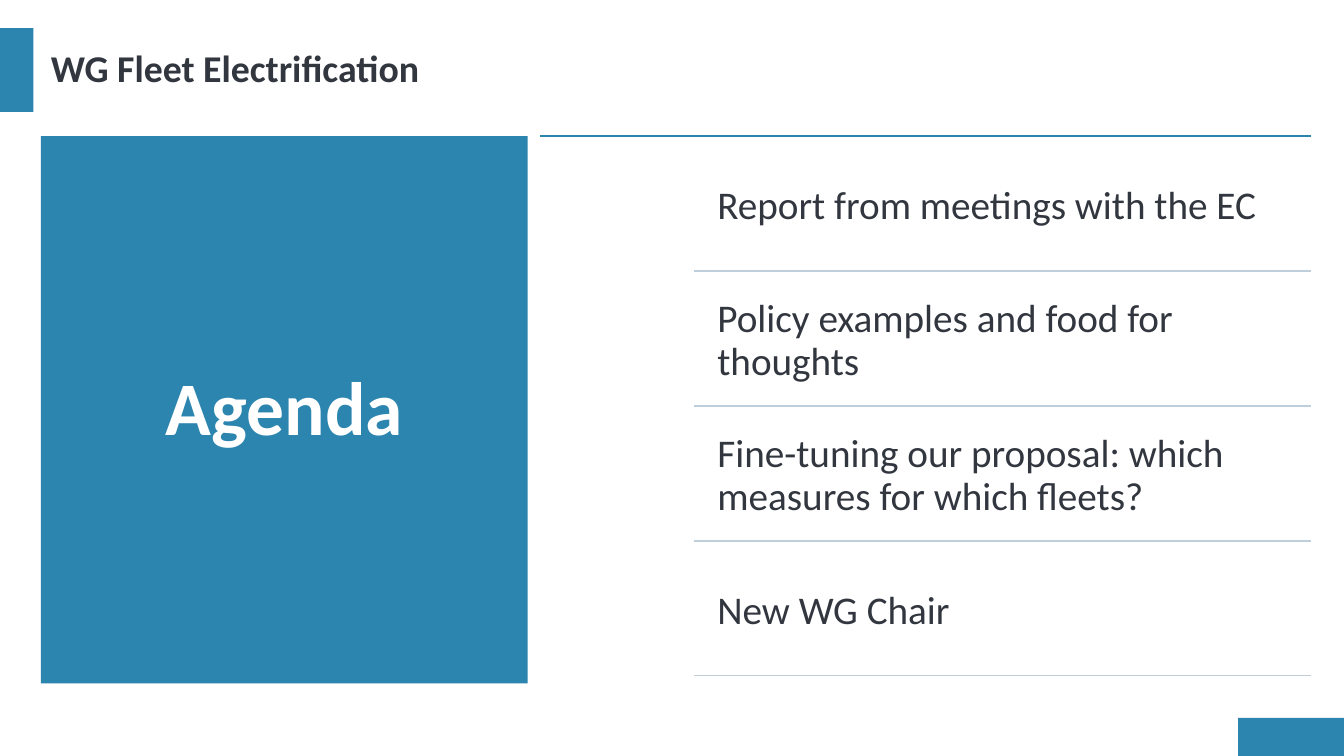
from lxml import etree
from pptx import Presentation
from pptx import util as u
from pptx.dml.color import RGBColor
from pptx.enum import shapes, text
from pptx.oxml.ns import qn

COLORS = {"blue": "2C85AE", "pale": "BECEDB", "dark": "32363F", "white": "FFFFFF"}
AGENDA_ITEMS = [
    "Report from meetings with the EC",
    "Policy examples and food for thoughts",
    "Fine-tuning our proposal: which measures for which fleets?",
    "New WG Chair",
]


class SlideBuilder:
    """Holds the style and the slide that is being filled."""

    font_name = "Calibri"
    line_width = u.Pt(1)
    line_spacing = 0.9

    def __init__(self, slide):
        self.slide = slide

    def color(self, name):
        return RGBColor.from_string(COLORS[name])

    def block(self, left, top, width, height, color="blue"):
        shape = self.slide.shapes.add_shape(
            shapes.MSO_SHAPE.RECTANGLE, *map(u.Cm, (left, top, width, height)))
        shape.shadow.inherit = False
        shape.fill.solid()
        shape.fill.fore_color.rgb = self.color(color)
        shape.line.fill.background()

    def rule(self, left, right, y, color):
        connector = self.slide.shapes.add_connector(
            shapes.MSO_CONNECTOR.STRAIGHT, *map(u.Cm, (left, y, right, y)))
        connector.line.color.rgb = self.color(color)
        connector.line.width = self.line_width
        etree.SubElement(connector._element.spPr, qn("a:effectLst"))

    def label(self, left, top, width, height, words, size, color="dark",
              bold=False, align=text.PP_ALIGN.LEFT, inset=0.25):
        box = self.slide.shapes.add_textbox(*map(u.Cm, (left, top, width, height)))
        frame = box.text_frame
        frame_format = {
            "word_wrap": True,
            "vertical_anchor": text.MSO_ANCHOR.MIDDLE,
            "margin_left": u.Cm(inset),
            "margin_right": u.Cm(inset),
            "margin_top": u.Cm(inset),
            "margin_bottom": u.Cm(inset),
        }
        paragraph = frame.paragraphs[0]
        paragraph_format = {"alignment": align, "line_spacing": self.line_spacing}
        run = paragraph.add_run()
        run.text = words
        font_format = {"name": self.font_name, "size": u.Pt(size), "bold": bold}
        for target, values in ((frame, frame_format), (paragraph, paragraph_format),
                               (run.font, font_format)):
            for name, value in values.items():
                setattr(target, name, value)
        run.font.color.rgb = self.color(color)


def main():
    presentation = Presentation()
    presentation.slide_width = u.Cm(33.87)
    presentation.slide_height = u.Cm(19.05)
    builder = SlideBuilder(presentation.slides.add_slide(presentation.slide_layouts[6]))

    # Corner accents and agenda panel
    builder.block(31.2, 18.09, 2.67, 0.96)
    builder.block(0, 0.71, 0.84, 2.11)
    builder.block(1.03, 3.43, 12.27, 13.79)

    # Title and panel heading
    builder.label(1.03, 0.71, 32, 2.11, "WG Fleet Electrification", 27, bold=True)
    builder.label(1.52, 4.04, 11.3, 12.65, "Agenda", 54, "white", True,
                  text.PP_ALIGN.CENTER)

    # Agenda items, each closed by a rule
    list_top, pitch, right = 3.43, 3.4, 33.05
    builder.rule(13.61, right, list_top, "blue")
    for index, item in enumerate(AGENDA_ITEMS):
        top = list_top + index * pitch
        builder.label(17.78, top + 0.15, 15.24, pitch - 0.15, item, 28, inset=0.3)
        builder.rule(17.5, right, top + pitch, "pale")

    presentation.save("out.pptx")


if __name__ == "__main__":
    main()
